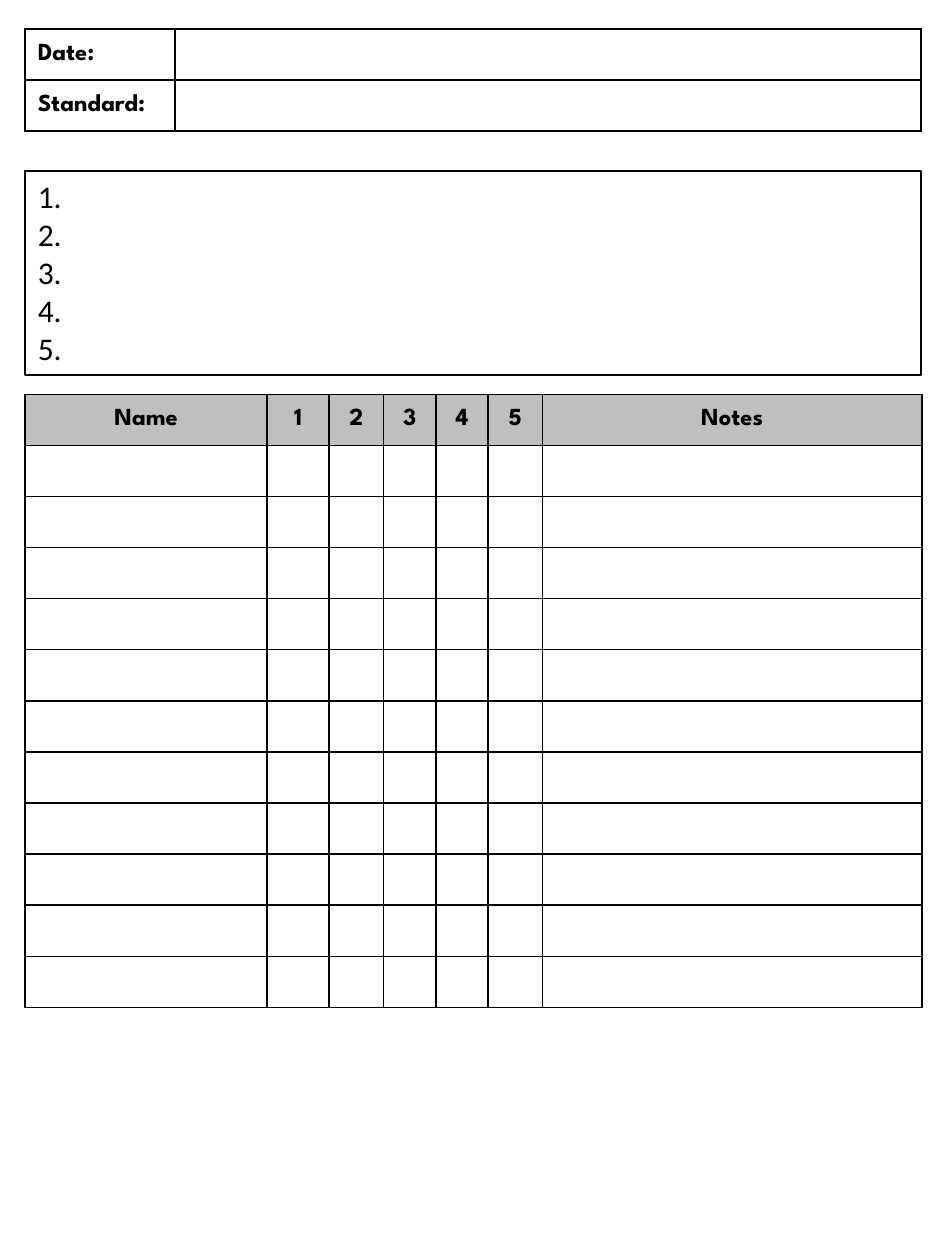
from lxml.etree import SubElement
from pptx import Presentation
from pptx.dml.color import RGBColor
from pptx.enum.text import MSO_ANCHOR as Anchor, MSO_AUTO_SIZE as AutoSize, PP_ALIGN as Align
from pptx.oxml.ns import qn
from pptx.util import Pt

BLACK = RGBColor(0x00, 0x00, 0x00)
WHITE = RGBColor(0xFF, 0xFF, 0xFF)
GRAY = RGBColor(0xBF, 0xBF, 0xBF)
LABEL_FONT = "League Spartan"
LIST_FONT = "Calibri"
ROW_HEIGHT = 29.2
STUDENT_ROWS = 11
LEFT = 14.4
WIDTH = 512


def write(paragraph, text, font=LABEL_FONT, size=14, bold=True, align=Align.LEFT):
    """Put formatted text into a paragraph."""
    paragraph.alignment = align
    run = paragraph.add_run()
    run.text = text
    run.font.name = font
    run.font.size = Pt(size)
    run.font.bold = bold
    run.font.color.rgb = BLACK


def border(cell):
    """Draw a 1 pt black line on every side of a cell."""
    properties = cell._tc.get_or_add_tcPr()
    for position, side in enumerate(("a:lnL", "a:lnR", "a:lnT", "a:lnB")):
        line = SubElement(properties, qn(side), w=str(Pt(1)))
        fill = SubElement(line, qn("a:solidFill"))
        SubElement(fill, qn("a:srgbClr"), val=str(BLACK))
        properties.insert(position, line)


def add_grid(slide, left, top, widths, row_count):
    """Add a plain bordered table with equal rows."""
    frame = slide.shapes.add_table(row_count, len(widths), Pt(left), Pt(top),
                                   Pt(sum(widths)), Pt(row_count * ROW_HEIGHT))
    grid = frame.table
    grid.first_row = grid.horz_banding = False
    for column, width in zip(grid.columns, widths):
        column.width = Pt(width)
    for row in grid.rows:
        row.height = Pt(ROW_HEIGHT)
    for cell in grid.iter_cells():
        cell.vertical_anchor = Anchor.MIDDLE
        cell.fill.background()
        border(cell)
    return grid


def add_lesson_details(slide, left, top, width):
    """Add the date and standard rows."""
    label_width = 85.7
    details = add_grid(slide, left, top, [label_width, width - label_width], 2)
    for cell in details.iter_cells():
        cell.fill.solid()
        cell.fill.fore_color.rgb = WHITE
    for row, label in enumerate(("Date:", "Standard:")):
        write(details.cell(row, 0).text_frame.paragraphs[0], label)


def add_criteria(slide, left, top, width, height):
    """Turn the body placeholder into the outlined list of five criteria."""
    criteria = slide.placeholders[1]
    criteria.left, criteria.top = Pt(left), Pt(top)
    criteria.width, criteria.height = Pt(width), Pt(height)
    criteria.line.color.rgb = BLACK
    criteria.line.width = Pt(1)
    frame = criteria.text_frame
    frame.auto_size = AutoSize.NONE
    frame.vertical_anchor = Anchor.TOP
    for number in range(1, 6):
        paragraph = frame.paragraphs[0] if number == 1 else frame.add_paragraph()
        paragraph.space_before = Pt(0)
        write(paragraph, f"{number}.", font=LIST_FONT, size=18, bold=False)
        properties = paragraph._p.get_or_add_pPr()
        properties.set("marL", "0")
        properties.set("indent", "0")
        SubElement(properties, qn("a:buNone"))


def add_checklist(slide, left, top):
    """Add the table of names, five check columns and notes."""
    widths = [138.3, 35.4, 31.1, 30, 29.7, 31.1, 217]
    headings = ["Name", "1", "2", "3", "4", "5", "Notes"]
    checklist = add_grid(slide, left, top, widths, STUDENT_ROWS + 1)
    for column, heading in enumerate(headings):
        cell = checklist.cell(0, column)
        cell.fill.solid()
        cell.fill.fore_color.rgb = GRAY
        write(cell.text_frame.paragraphs[0], heading, align=Align.CENTER)


def main():
    """Build the checklist page and save it."""
    deck = Presentation()
    deck.slide_width, deck.slide_height = Pt(540), Pt(720)
    slide = deck.slides.add_slide(deck.slide_layouts[1])
    title = slide.shapes.title.element
    title.getparent().remove(title)
    add_lesson_details(slide, LEFT, 16.5, WIDTH)
    add_checklist(slide, LEFT, 225.3)
    add_criteria(slide, LEFT, 97.8, WIDTH, 116.5)
    deck.save("out.pptx")


if __name__ == "__main__":
    main()
